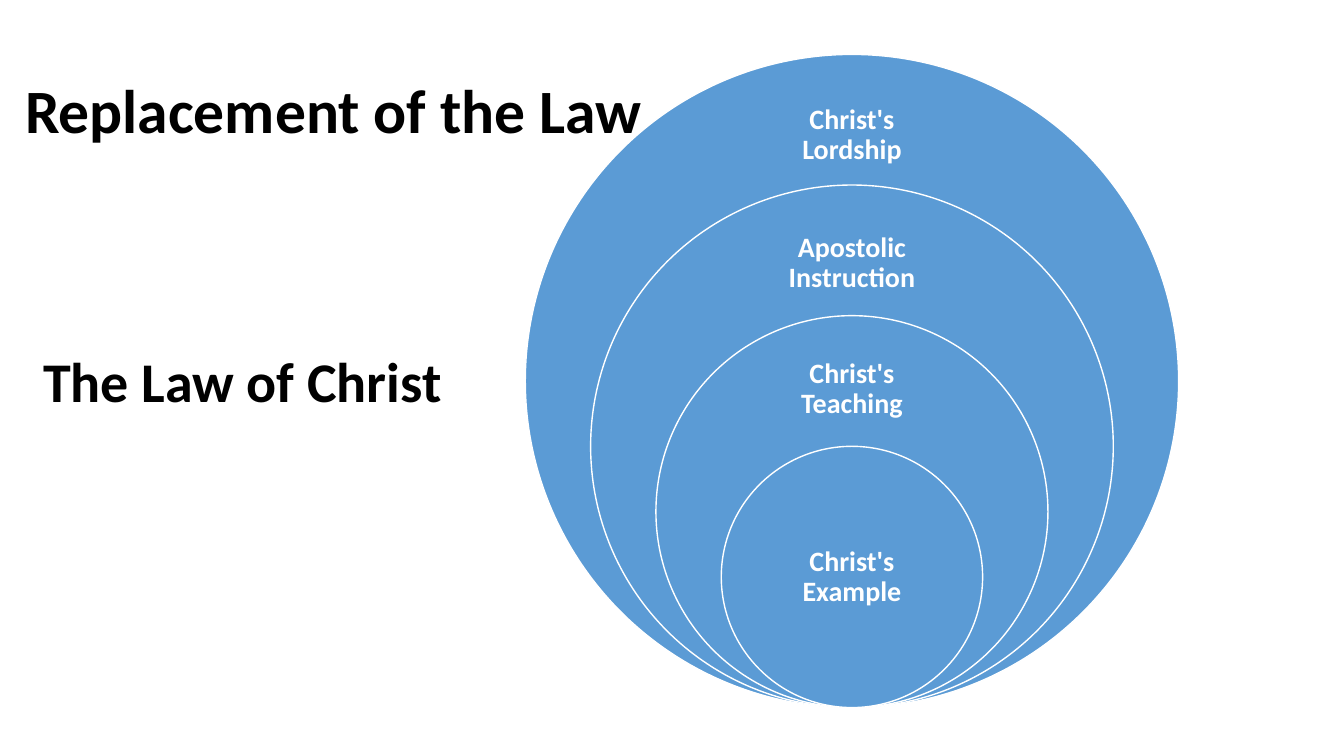
from pptx import Presentation
from pptx.dml.color import RGBColor
from pptx.enum.shapes import MSO_SHAPE
from pptx.enum.text import MSO_ANCHOR, PP_ALIGN
from pptx.util import Inches, Pt

ELLIPSE = MSO_SHAPE.OVAL
TOP, MIDDLE = MSO_ANCHOR.TOP, MSO_ANCHOR.MIDDLE
LEFT, CENTER = PP_ALIGN.LEFT, PP_ALIGN.CENTER
BLACK = RGBColor(0x00, 0x00, 0x00)
WHITE = RGBColor(0xFF, 0xFF, 0xFF)
BLUE = RGBColor(0x5B, 0x9B, 0xD5)

# Content
TITLE = "Replacement of the Law"
SUBJECT = "The Law of Christ"
# Outermost ring first: label, label top, label height
RINGS = [
    ("Christ's Lordship", 0.86, 0.97),
    ("Apostolic Instruction", 2.15, 0.93),
    ("Christ's Teaching", 3.42, 0.88),
    ("Christ's Example", 5.08, 1.3),
]

# Ring geometry in inches: all circles touch at the bottom
CENTER_X = 8.45
BOTTOM = 7.02
OUTER_DIAMETER = 6.48
DIAMETER_STEP = OUTER_DIAMETER / 5
LABEL_WIDTH = 1.81


def add_text(slide, text, box, size, color, anchor=TOP, align=LEFT,
             margins=(0.1, 0.05), line_spacing=1.0):
    shape = slide.shapes.add_textbox(*(Inches(length) for length in box))
    frame = shape.text_frame
    frame.word_wrap = True
    frame.vertical_anchor = anchor
    frame.margin_left = frame.margin_right = Inches(margins[0])
    frame.margin_top = frame.margin_bottom = Inches(margins[1])
    paragraph = frame.paragraphs[0]
    paragraph.text = text
    paragraph.alignment = align
    paragraph.line_spacing = line_spacing
    font = paragraph.font
    font.name = "Calibri"
    font.size = Pt(size)
    font.bold = True
    font.color.rgb = color


def add_ring(slide, diameter):
    shape = slide.shapes.add_shape(
        ELLIPSE, Inches(CENTER_X - diameter / 2), Inches(BOTTOM - diameter),
        Inches(diameter), Inches(diameter))
    shape.shadow.inherit = False
    shape.fill.solid()
    shape.fill.fore_color.rgb = BLUE
    shape.line.color.rgb = WHITE
    shape.line.width = Pt(1)


def main():
    presentation = Presentation()
    presentation.slide_width = Inches(13.33)
    presentation.slide_height = Inches(7.5)
    slide = presentation.slides.add_slide(presentation.slide_layouts[6])

    # Title
    add_text(slide, TITLE, (0.15, 0.4, 11.5, 1.45), 44, BLACK,
             anchor=MIDDLE, line_spacing=0.9)

    # Nested rings with their labels
    for index, (label, top, height) in enumerate(RINGS):
        add_ring(slide, OUTER_DIAMETER - index * DIAMETER_STEP)
        box = (CENTER_X - LABEL_WIDTH / 2, top, LABEL_WIDTH, height)
        add_text(slide, label, box, 20, WHITE, MIDDLE, CENTER,
                 margins=(0.16, 0.16), line_spacing=0.9)

    # Subject beside the rings
    add_text(slide, SUBJECT, (0.33, 3.39, 4.37, 0.77), 40, BLACK)

    presentation.save("out.pptx")


if __name__ == "__main__":
    main()
